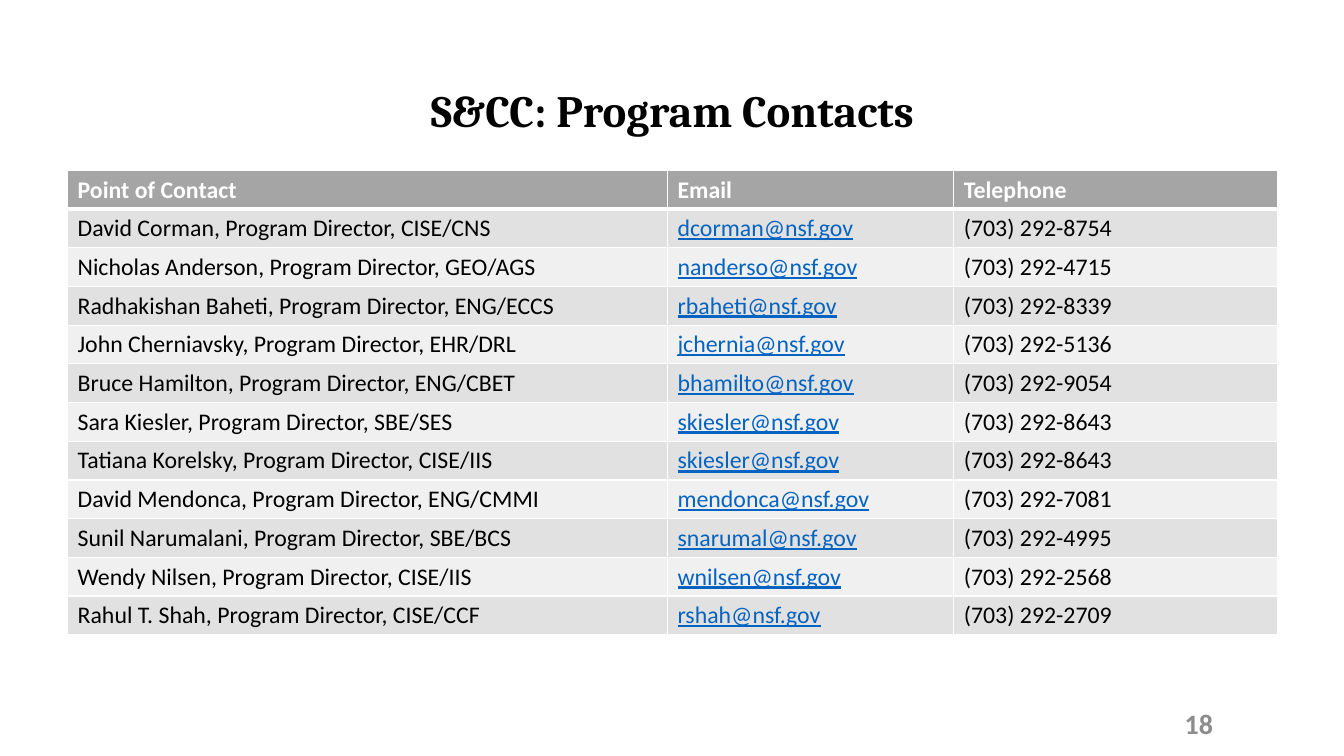
import pptx
import pptx.util
import pptx.dml.color
import pptx.enum.text
import pptx.oxml
import pptx.oxml.ns

Inches = pptx.util.Inches
Pt = pptx.util.Pt
RGBColor = pptx.dml.color.RGBColor
Align = pptx.enum.text.PP_ALIGN
Anchor = pptx.enum.text.MSO_ANCHOR

BLACK = RGBColor(0x00, 0x00, 0x00)
WHITE = RGBColor(0xFF, 0xFF, 0xFF)
HEAD = RGBColor(0xA5, 0xA5, 0xA5)
BANDS = RGBColor(0xF0, 0xF0, 0xF0), RGBColor(0xE1, 0xE1, 0xE1)
LINK = RGBColor(0x05, 0x63, 0xC1)
GREY = RGBColor(0x8C, 0x8C, 0x8C)

HEADERS = ("Point of Contact", "Email", "Telephone")
MAIL = HEADERS.index("Email")
PEOPLE = [
    ("David Corman", "CISE/CNS", "dcorman", "8754"),
    ("Nicholas Anderson", "GEO/AGS", "nanderso", "4715"),
    ("Radhakishan Baheti", "ENG/ECCS", "rbaheti", "8339"),
    ("John Cherniavsky", "EHR/DRL", "jchernia", "5136"),
    ("Bruce Hamilton", "ENG/CBET", "bhamilto", "9054"),
    ("Sara Kiesler", "SBE/SES", "skiesler", "8643"),
    ("Tatiana Korelsky", "CISE/IIS", "skiesler", "8643"),
    ("David Mendonca", "ENG/CMMI", "mendonca", "7081"),
    ("Sunil Narumalani", "SBE/BCS", "snarumal", "4995"),
    ("Wendy Nilsen", "CISE/IIS", "wnilsen", "2568"),
    ("Rahul T. Shah", "CISE/CCF", "rshah", "2709"),
]


class Deck:
    """Holds the text style and the current slide."""

    def __init__(self, slide, font="Calibri", size=17):
        self.slide = slide
        self.font = font
        self.size = size

    def style(self, para, color, size=None, font=None, bold=False, line=False):
        for run in para.runs:
            face = run.font
            face.name = font or self.font
            face.size = Pt(size or self.size)
            face.color.rgb = color
            face.bold = bold
            face.underline = line

    def text(self, words, box, align, color, size, font=None, space=1.0):
        shape = self.slide.shapes.add_textbox(*map(Inches, box))
        frame = shape.text_frame
        frame.word_wrap = True
        frame.vertical_anchor = Anchor.MIDDLE
        frame.text = words
        para = frame.paragraphs[0]
        para.alignment = align
        para.line_spacing = space
        self.style(para, color, size, font, bold=True)

    def edge(self, cell, side, width):
        """Draw one white border of a cell; side is L, R, T or B."""
        cell._tc.get_or_add_tcPr().append(pptx.oxml.parse_xml(
            f'<a:ln{side} {pptx.oxml.ns.nsdecls("a")} w="{Pt(width)}">'
            f'<a:solidFill><a:srgbClr val="{WHITE}"/></a:solidFill></a:ln{side}>'))

    def table(self, rows, left, top, widths, height):
        frame = self.slide.shapes.add_table(
            len(rows), len(widths), Inches(left), Inches(top),
            Inches(sum(widths)), Inches(height * len(rows)))
        grid = frame.table
        for col, width in zip(grid.columns, widths):
            col.width = Inches(width)
        for r, row in enumerate(rows):
            grid.rows[r].height = Inches(height)
            for c, words in enumerate(row):
                self.cell(grid.cell(r, c), words, r, c)

    def cell(self, cell, words, r, c):
        head = r == 0
        mail = c == MAIL and not head
        for side in "LRTB":
            heavy = (side == "B" and head) or (side == "T" and r == 1)
            self.edge(cell, side, 3 if heavy else 1)
        cell.fill.solid()
        cell.fill.fore_color.rgb = HEAD if head else BANDS[r % 2]
        cell.text_frame.text = words
        color = WHITE if head else LINK if mail else BLACK
        self.style(cell.text_frame.paragraphs[0], color, bold=head, line=mail)


def main():
    show = pptx.Presentation()
    show.slide_width = Inches(13.33)
    show.slide_height = Inches(7.5)
    deck = Deck(show.slides.add_slide(show.slide_layouts[6]))

    deck.text("S&CC: Program Contacts", (0.92, 0.4, 11.5, 1.45),
              Align.CENTER, BLACK, 32, "Cambria", 0.9)
    rows = [HEADERS] + [
        (f"{name}, Program Director, {unit}", f"{user}@nsf.gov", f"(703) 292-{ext}")
        for name, unit, user, ext in PEOPLE]
    deck.table(rows, 0.67, 1.69, (5.95, 2.84, 3.21), 0.37)
    deck.text("18", (9.13, 6.98, 3, 0.4), Align.RIGHT, GREY, 20)

    show.save("out.pptx")


if __name__ == "__main__":
    main()
